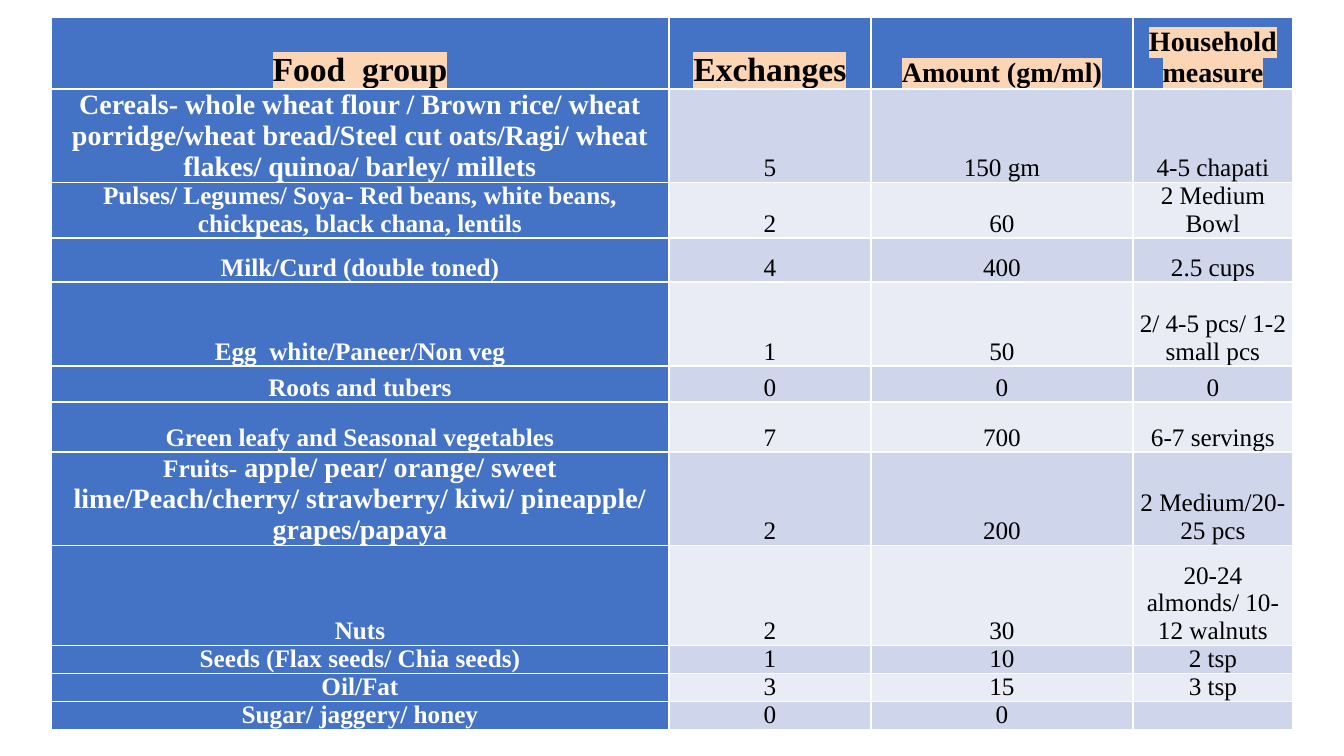
from lxml import etree
from pptx import Presentation
from pptx import util as u
from pptx.dml.color import RGBColor
from pptx.enum import text as t
from pptx.oxml import ns

PX = 914400 / 100.8
FONT = "Times New Roman"
BLUE = RGBColor(0x44, 0x72, 0xC4)
BAND_DARK = RGBColor(0xCF, 0xD5, 0xEA)
BAND_LIGHT = RGBColor(0xE9, 0xEB, 0xF5)
PEACH = RGBColor(0xFC, 0xD5, 0xB4)
WHITE = RGBColor(0xFF, 0xFF, 0xFF)
BLACK = RGBColor(0, 0, 0)

COLUMN_WIDTHS = [618, 202, 262, 160]
ROW_HEIGHTS = [72, 93, 55, 44, 84, 36, 50, 93, 100, 28, 28, 28]
HEADERS = [("Food  group", 24), ("Exchanges", 24),
           ("Amount (gm/ml)", 20), ("Household measure", 20)]
# Each food is a list of (text, size) spans.
FOODS = [
    ([("Cereals- whole wheat flour / Brown rice/ wheat porridge/wheat bread/"
       "Steel cut oats/Ragi/ wheat flakes/ quinoa/ barley/ millets", 20)],
     "5", "150 gm", "4-5 chapati"),
    ([("Pulses/ Legumes/ Soya- Red beans, white beans, chickpeas, "
       "black chana, lentils", 18)], "2", "60", "2 Medium Bowl"),
    ([("Milk/Curd (double toned)", 18)], "4", "400", "2.5 cups"),
    ([("Egg  white/Paneer/Non veg", 18)], "1", "50", "2/ 4-5 pcs/ 1-2 small pcs"),
    ([("Roots and tubers", 18)], "0", "0", "0"),
    ([("Green leafy and Seasonal vegetables", 18)], "7", "700", "6-7 servings"),
    ([("Fruits-", 18),
      (" apple/ pear/ orange/ sweet lime/Peach/cherry/ strawberry/ kiwi/ "
       "pineapple/ grapes/papaya", 20)], "2", "200", "2 Medium/20-25 pcs"),
    ([("Nuts", 18)], "2", "30", "20-24 almonds/ 10-12 walnuts"),
    ([("Seeds (Flax seeds/ Chia seeds)", 18)], "1", "10", "2 tsp"),
    ([("Oil/Fat", 18)], "3", "15", "3 tsp"),
    ([("Sugar/ jaggery/ honey", 18)], "0", "0", ""),
]


def px(length):
    return u.Emu(round(length * PX))


def highlight(span, color):
    """Put a marker colour behind one run."""
    span.font.fill.solid()
    span.font.color.rgb = BLACK
    fill = span.font._element.find(ns.qn("a:solidFill"))
    marker = etree.Element(ns.qn("a:highlight"))
    etree.SubElement(marker, ns.qn("a:srgbClr"), val=str(color))
    fill.addnext(marker)


def fill_cell(cell, spans, fill, color, bold, marker=None):
    cell.fill.solid()
    cell.fill.fore_color.rgb = fill
    cell.vertical_anchor = t.MSO_ANCHOR.BOTTOM
    cell.margin_left = cell.margin_right = px(5)
    cell.margin_top = cell.margin_bottom = 0
    para = cell.text_frame.paragraphs[0]
    para.alignment = t.PP_ALIGN.CENTER
    para.font.name = FONT
    para.font.size = u.Pt(spans[0][1])
    para.font.bold = bold
    para.font.color.rgb = color
    for words, size in spans:
        if not words:
            continue
        span = para.add_run()
        span.text = words
        if len(spans) > 1:
            span.font.size = u.Pt(size)
        if marker is not None:
            highlight(span, marker)


def add_food_table(slide):
    frame = slide.shapes.add_table(
        len(ROW_HEIGHTS), len(COLUMN_WIDTHS), px(51), px(17),
        px(sum(COLUMN_WIDTHS)), px(sum(ROW_HEIGHTS)))
    table = frame.table
    table.first_col = True
    for column, width in zip(table.columns, COLUMN_WIDTHS):
        column.width = px(width)
    for row, height in zip(table.rows, ROW_HEIGHTS):
        row.height = px(height)
    for column, header in enumerate(HEADERS):
        fill_cell(table.cell(0, column), [header], BLUE, BLACK, True, PEACH)
    for row, (food, *values) in enumerate(FOODS, start=1):
        fill_cell(table.cell(row, 0), food, BLUE, WHITE, True)
        band = BAND_DARK if row % 2 else BAND_LIGHT
        for column, value in enumerate(values, start=1):
            fill_cell(table.cell(row, column), [(value, 18)], band, BLACK, False)


def main():
    deck = Presentation()
    deck.slide_width, deck.slide_height = px(1344), px(756)
    slide = deck.slides.add_slide(deck.slide_layouts[6])
    add_food_table(slide)
    deck.save("out.pptx")


if __name__ == "__main__":
    main()
